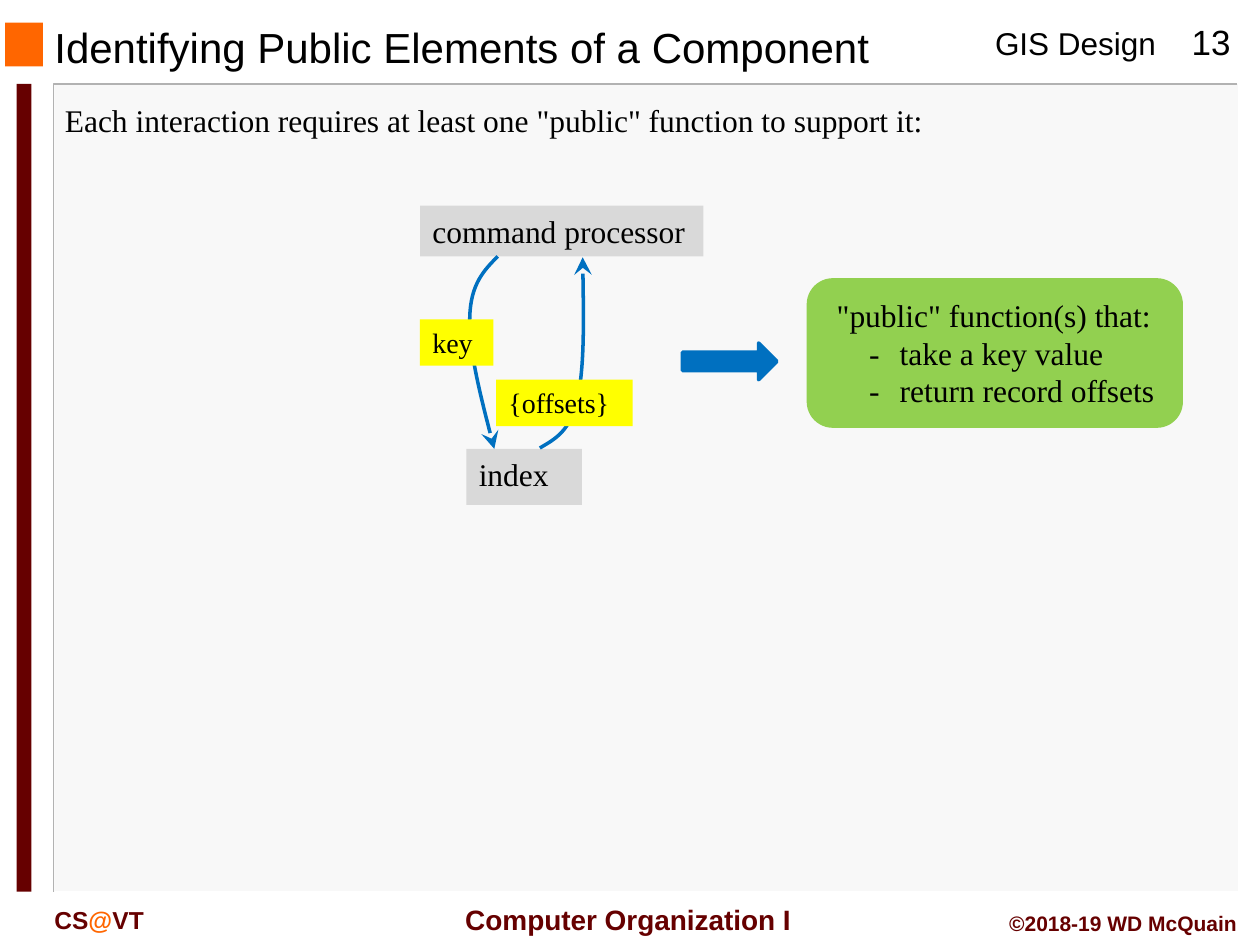
from pptx import Presentation
from pptx.dml.color import RGBColor
from pptx.enum.shapes import MSO_SHAPE
from pptx.enum.text import MSO_ANCHOR, PP_ALIGN
from pptx.oxml import parse_xml
from pptx.oxml.ns import nsdecls, qn
from pptx.util import Pt

RECT = MSO_SHAPE.RECTANGLE
ROUND = MSO_SHAPE.FLOWCHART_ALTERNATE_PROCESS
ARROW = MSO_SHAPE.RIGHT_ARROW
TOP, MIDDLE = MSO_ANCHOR.TOP, MSO_ANCHOR.MIDDLE
LEFT, CENTER, RIGHT = PP_ALIGN.LEFT, PP_ALIGN.CENTER, PP_ALIGN.RIGHT
SANS, SERIF = "Arial", "Times New Roman"
BLACK, MAROON, ORANGE = "000000", "660000", "FF6600"
GRAY, YELLOW, GREEN, BLUE = "D9D9D9", "FFFF00", "92D050", "0070C0"


def paint(form, color):
    form.solid()
    form.fore_color.rgb = RGBColor.from_string(color)


def stroke(shape, color, width):
    paint(shape.line.fill, color)
    shape.line.width = Pt(width)


def block(slide, kind, x, y, w, h, fill, line=None):
    shape = slide.shapes.add_shape(kind, Pt(x), Pt(y), Pt(w), Pt(h))
    shape.shadow.inherit = False
    paint(shape.fill, fill)
    if line:
        stroke(shape, line, 2)
    else:
        shape.line.fill.background()
    return shape


def write(shape, lines, size, font=SERIF, align=LEFT, anchor=TOP,
          bold=False, wrap=True):
    frame = shape.text_frame
    frame.word_wrap = wrap
    frame.vertical_anchor = anchor
    for i, runs in enumerate(lines):
        para = frame.paragraphs[0] if i == 0 else frame.add_paragraph()
        para.alignment = align
        for words, color in runs:
            run = para.add_run()
            run.text = words
            run.font.name = font
            run.font.size = Pt(size)
            run.font.bold = bold
            paint(run.font.fill, color)
    return frame


def label(slide, x, y, w, h, runs, size, **style):
    field = slide.shapes.add_textbox(Pt(x), Pt(y), Pt(w), Pt(h))
    return write(field, runs, size, **style)


def trace(slide, x, y, points, color, width):
    places = [(Pt(x + a), Pt(y + b)) for a, b in points]
    pen = slide.shapes.build_freeform(*places[0])
    pen.add_line_segments(places[1:], close=False)
    shape = pen.convert_to_shape()
    shape.shadow.inherit = False
    shape.fill.background()
    stroke(shape, color, width)
    return shape


def curve(slide, x, y, points):
    shape = trace(slide, x, y, points, BLUE, 2)
    steps = list(shape.element.iter(qn("a:lnTo")))
    for i in range(0, len(steps), 3):
        bend = parse_xml(f"<a:cubicBezTo {nsdecls('a')}/>")
        steps[i].addprevious(bend)
        for step in steps[i:i + 3]:
            bend.append(step[0])
            step.getparent().remove(step)
    tip = f'<a:tailEnd {nsdecls("a")} type="stealth" w="lg" len="lg"/>'
    shape.line.fill
    shape.element.spPr.find(qn("a:ln")).append(parse_xml(tip))


def panel(slide, x, y, w, h):
    block(slide, RECT, x, y, w, h, "F8F8F8")
    trace(slide, x - 0.5, y, [(w, 0), (0, 0), (0, h)], "B2B2B2", 1)
    trace(slide, x + 0.5, y, [(w, 0), (w, h), (0, h)], "FFFFFF", 1)
    block(slide, RECT, x - 21.5, y, 8.5, h, MAROON)
    label(slide, x - 1, y + 6, w - 5, 29,
          [[('Each interaction requires at least one "public" function '
             'to support it:', BLACK)]], 18)


def header(slide, x, y):
    block(slide, RECT, x + 3, y + 13, 21.5, 25, ORANGE)
    label(slide, x + 24, y + 13, 515, 27.5,
          [[("Identifying Public Elements of a Component", BLACK)]], 24,
          font=SANS, anchor=MIDDLE)
    label(slide, x + 561.5, y + 10, 107, 29, [[("GIS Design", BLACK)]], 18,
          font=SANS, wrap=False)
    label(slide, x + 668, y + 8, 48, 31, [[("13", BLACK)]], 20,
          font=SANS, align=CENTER)


def footer(slide, x, y):
    label(slide, x + 24, y + 1.5, 108, 24,
          [[("CS", MAROON), ("@", ORANGE), ("VT", MAROON)]], 14,
          font=SANS, bold=True)
    label(slide, x + 250.5, y, 212.5, 26.5,
          [[(" Computer Organization I", MAROON)]], 16, font=SANS,
          align=CENTER, anchor=MIDDLE, bold=True, wrap=False)
    label(slide, x + 504, y + 4.5, 210, 21.5,
          [[("©2018-19 WD McQuain", MAROON)]], 12, font=SANS,
          align=RIGHT, bold=True)


def diagram(slide, x, y):
    def node(words, a, b, w, h, fill, size):
        shape = block(slide, RECT, x + a, y + b, w, h, fill)
        write(shape, [[(words, BLACK)]], size, wrap=False)

    node("index", 26.5, 139, 66, 32, GRAY, 18)
    node("command processor", 0, 0, 162, 29, GRAY, 18)
    curve(slide, x, y, [(44.5, 29), (36.5, 37), (29, 45), (28.5, 63.5),
                        (28, 82), (35, 110.5), (42.5, 139)])
    curve(slide, x, y, [(68.5, 138.5), (77, 133.5), (86, 129), (90, 110.5),
                        (94, 92), (93.5, 61), (93, 29.5)])
    node("key", 0, 65, 42, 26.5, YELLOW, 16)
    node("{offsets}", 43.5, 99.5, 78, 26.5, YELLOW, 16)


def result(slide, x, y, w, h):
    block(slide, ROUND, x, y, w, h, GREEN, GREEN)
    lines = ['"public" function(s) that:', "-\ttake a key value",
             "-\treturn record offsets"]
    frame = label(slide, x + 9, y + 5.5, w - 15, h - 11,
                  [[(line, BLACK)] for line in lines], 18)
    for para in frame.paragraphs[1:]:
        props = para._p.get_or_add_pPr()
        props.set("marL", str(Pt(36)))
        props.set("indent", str(Pt(-17.5)))


def main():
    deck = Presentation()
    deck.slide_width, deck.slide_height = Pt(720), Pt(540)
    slide = deck.slides.add_slide(deck.slide_layouts[6])
    panel(slide, 31, 48, 676.5, 461.5)
    header(slide, 0, 0)
    footer(slide, 0, 512)
    diagram(slide, 240, 117.5)
    result(slide, 462, 160, 213, 83.5)
    block(slide, ARROW, 390, 196, 54, 21, BLUE, BLUE)
    deck.save("out.pptx")


if __name__ == "__main__":
    main()
